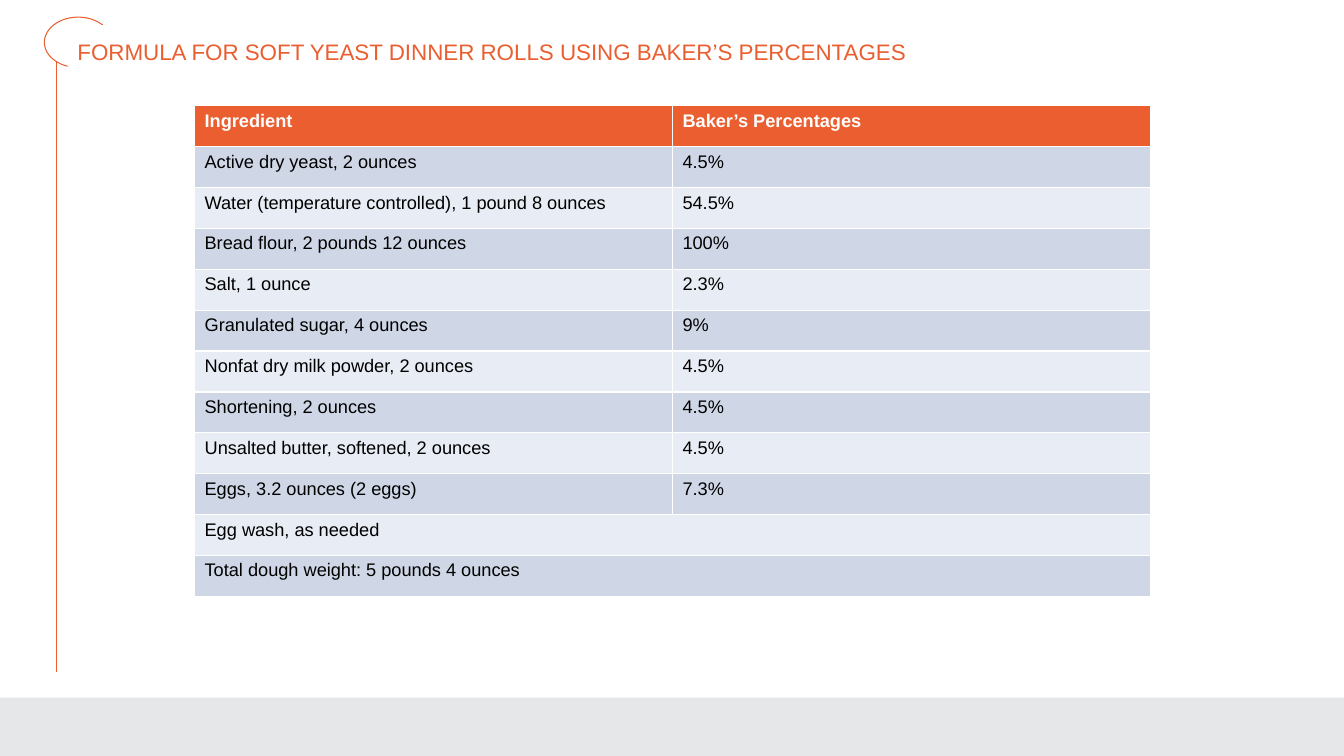
from dataclasses import dataclass

from lxml import etree
from pptx import Presentation
from pptx import util as u
from pptx.dml.color import RGBColor
from pptx.enum import shapes, text
from pptx.oxml.ns import qn


@dataclass(frozen=True)
class Theme:
    font: str = "Arial"
    accent: str = "EA5E2F"
    paper: str = "FFFFFF"
    ink: str = "000000"
    footer: str = "E6E7E9"
    bands: tuple = ("CFD7E7", "E8ECF4")
    title_size: int = 16
    table_size: int = 13
    line_width: float = 0.75


TITLE = "FORMULA FOR SOFT YEAST DINNER ROLLS USING BAKER’S PERCENTAGES"
HEADER = ("Ingredient", "Baker’s Percentages")
INGREDIENTS = [
    ("Active dry yeast, 2 ounces", "4.5%"),
    ("Water (temperature controlled), 1 pound 8 ounces", "54.5%"),
    ("Bread flour, 2 pounds 12 ounces", "100%"),
    ("Salt, 1 ounce", "2.3%"),
    ("Granulated sugar, 4 ounces", "9%"),
    ("Nonfat dry milk powder, 2 ounces", "4.5%"),
    ("Shortening, 2 ounces", "4.5%"),
    ("Unsalted butter, softened, 2 ounces", "4.5%"),
    ("Eggs, 3.2 ounces (2 eggs)", "7.3%"),
]
NOTES = [("Egg wash, as needed",), ("Total dough weight: 5 pounds 4 ounces",)]


def colour(code):
    return RGBColor.from_string(code)


class SlideBuilder:
    """Holds the theme and the page that elements are added to."""

    def __init__(self, page, theme):
        self.page = page
        self.theme = theme

    def style_text(self, frame, size, code, bold=False):
        for para in frame.paragraphs:
            for span in para.runs:
                span.font.name = self.theme.font
                span.font.size = u.Pt(size)
                span.font.bold = bold
                span.font.color.rgb = colour(code)

    def outline(self, line):
        line.color.rgb = colour(self.theme.accent)
        line.width = u.Pt(self.theme.line_width)

    def line(self, x1, y1, x2, y2):
        rule = self.page.shapes.add_connector(
            shapes.MSO_CONNECTOR.STRAIGHT, *map(u.Inches, (x1, y1, x2, y2)))
        self.outline(rule.line)
        properties = rule._element.find(qn("p:spPr"))
        etree.SubElement(properties, qn("a:effectLst"))

    def shape(self, kind, place, fill, outlined=False):
        box = self.page.shapes.add_shape(kind, *map(u.Inches, place))
        box.shadow.inherit = False
        box.fill.solid()
        box.fill.fore_color.rgb = colour(fill)
        if outlined:
            self.outline(box.line)
        else:
            box.line.fill.background()

    def title(self, words, place):
        box = self.page.shapes.add_textbox(*map(u.Inches, place))
        frame = box.text_frame
        frame.word_wrap = True
        frame.vertical_anchor = text.MSO_ANCHOR.MIDDLE
        frame.text = words
        frame.paragraphs[0].line_spacing = 0.5
        self.style_text(frame, self.theme.title_size, self.theme.accent)

    def table(self, rows, place):
        """Adds a banded table; a row with one entry spans every column."""
        columns = len(rows[0])
        frame = self.page.shapes.add_table(
            len(rows), columns, *map(u.Inches, place))
        table = frame.table
        for index, entries in enumerate(rows):
            is_header = index == 0
            fill = self.theme.accent if is_header else self.theme.bands[(index - 1) % 2]
            ink = self.theme.paper if is_header else self.theme.ink
            if len(entries) < columns:
                table.cell(index, 0).merge(table.cell(index, columns - 1))
            for column in range(columns):
                cell = table.cell(index, column)
                cell.fill.solid()
                cell.fill.fore_color.rgb = colour(fill)
                if column < len(entries):
                    cell.text_frame.text = entries[column]
                    self.style_text(cell.text_frame, self.theme.table_size, ink, is_header)


def main():
    deck = Presentation()
    deck.slide_width = u.Inches(13.33)
    deck.slide_height = u.Inches(7.5)
    theme = Theme()
    builder = SlideBuilder(deck.slides.add_slide(deck.slide_layouts[6]), theme)

    kinds = shapes.MSO_SHAPE
    builder.line(0.56, 0.42, 0.56, 6.67)
    builder.shape(kinds.OVAL, (0.44, 0.17, 0.67, 0.5), theme.paper, outlined=True)
    builder.shape(kinds.RECTANGLE, (0.67, 0.25, 2.22, 0.5), theme.paper)
    builder.shape(kinds.RECTANGLE, (0, 6.92, 13.33, 0.58), theme.footer)
    builder.title(TITLE, (0.67, 0.3, 12, 0.53))
    builder.table([HEADER, *INGREDIENTS, *NOTES], (1.93, 1.05, 9.48, 4.87))
    deck.save("out.pptx")


if __name__ == "__main__":
    main()
